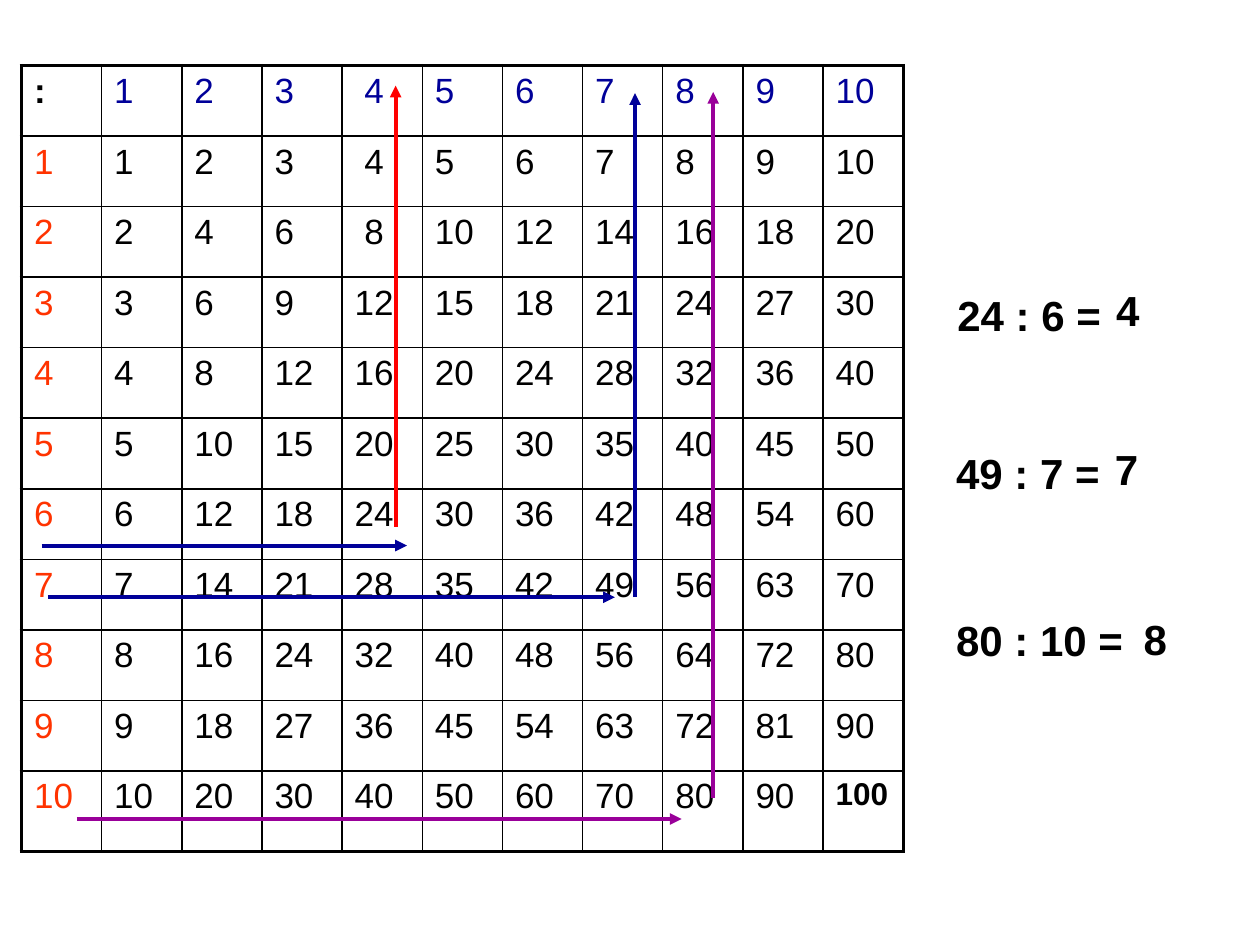
"""Build a slide that shows division with a multiplication table."""
import lxml.etree
import pptx
import pptx.dml.color
import pptx.enum.shapes
import pptx.enum.text
import pptx.oxml
import pptx.oxml.ns
import pptx.util

Inches = pptx.util.Inches
BLACK, BLUE, ORANGE, RED, PURPLE = "000000", "000099", "FF3300", "FF0000", "990099"
SIZE = 11
OUTER, INNER = 2.25, 1


def color(hex_text):
    return pptx.dml.color.RGBColor.from_string(hex_text)


def add_element(parent, tag, **attributes):
    return lxml.etree.SubElement(parent, pptx.oxml.ns.qn(tag), attributes)


def add_run(paragraph, text, size, bold=False, hex_text=BLACK):
    run = paragraph.add_run()
    run.text = text
    run.font.name = "Arial"
    run.font.size = pptx.util.Pt(size)
    run.font.bold = bold
    run.font.color.rgb = color(hex_text)


def set_borders(cell, row, column):
    last = SIZE - 1
    properties = cell._tc.get_or_add_tcPr()
    edges = {"L": column == 0, "R": column == last, "T": row == 0, "B": row == last}
    for side, is_outer in edges.items():
        width = pptx.util.Pt(OUTER if is_outer else INNER)
        line = add_element(properties, f"a:ln{side}", w=str(int(width)))
        add_element(add_element(line, "a:solidFill"), "a:srgbClr", val=BLACK)


def cell_content(row, column):
    """Return the text, size, weight and colour of one table cell."""
    if row == column == 0:
        return ":", 20, True, BLACK
    if row == column == SIZE - 1:
        return "100", 18, True, BLACK
    text = str(max(row, 1) * max(column, 1))
    if column == 4:
        text = text.rjust(2)
    return text, 20, False, BLUE if row == 0 else ORANGE if column == 0 else BLACK


def add_multiplication_table(slide):
    frame = slide.shapes.add_table(SIZE, SIZE, Inches(0.17), Inches(0.52), Inches(7), Inches(6.24))
    table = frame.table
    table.first_row = table.horz_banding = False
    for row in range(SIZE):
        table.rows[row].height = Inches(0.64 if row == SIZE - 1 else 0.56)
        for column in range(SIZE):
            cell = table.cell(row, column)
            set_borders(cell, row, column)
            cell.fill.background()
            paragraph = cell.text_frame.paragraphs[0]
            spacing = add_element(paragraph._p.get_or_add_pPr(), "a:spcBef")
            add_element(spacing, "a:spcPct", val="20000")
            add_run(paragraph, *cell_content(row, column))


def add_label(slide, left, top, width, parts):
    box = slide.shapes.add_textbox(Inches(left), Inches(top), Inches(width), Inches(0.5))
    box.text_frame.word_wrap = False
    box.text_frame.auto_size = pptx.enum.text.MSO_AUTO_SIZE.SHAPE_TO_FIT_TEXT
    for part in parts:
        is_space = part == " "
        add_run(box.text_frame.paragraphs[0], part, 18 if is_space else 24, not is_space)


def add_arrow(slide, start, end, hex_text):
    arrow = slide.shapes.add_connector(
        pptx.enum.shapes.MSO_CONNECTOR.STRAIGHT, *map(Inches, start + end))
    arrow.line.color.rgb = color(hex_text)
    arrow.line.width = pptx.util.Pt(2.25)
    add_element(arrow.line._get_or_add_ln(), "a:tailEnd", type="triangle")
    add_element(arrow._element.spPr, "a:effectLst")


def main():
    presentation = pptx.Presentation()
    presentation.slide_width, presentation.slide_height = Inches(10), Inches(7.5)
    slide = presentation.slides.add_slide(presentation.slide_layouts[6])
    add_multiplication_table(slide)

    labels = [
        (7.5, 2.25, 1.41, ("24 : 6 =", " ")),
        (7.42, 3.5, 1.41, (" ", "49 : 7 =")),
        (7.42, 4.83, 1.69, (" ", "80 : 10 =")),
        (8.69, 2.21, 0.46, (" ", "4")),
        (8.68, 3.47, 0.46, (" ", "7")),
        (8.91, 4.82, 0.46, (" ", "8")),
    ]
    for label in labels:
        add_label(slide, *label)

    arrows = [
        ((3.14, 4.18), (3.14, 0.68), RED),
        ((0.38, 4.74), (4.88, 4.74), BLUE),
        ((5.04, 4.74), (5.04, 0.74), BLUE),
        ((0.61, 6.5), (5.41, 6.5), PURPLE),
        ((5.66, 6.33), (5.66, 0.73), PURPLE),
        ((0.33, 4.33), (3.23, 4.33), BLUE),
    ]
    for arrow in arrows:
        add_arrow(slide, *arrow)
    presentation.save("out.pptx")


if __name__ == "__main__":
    main()
